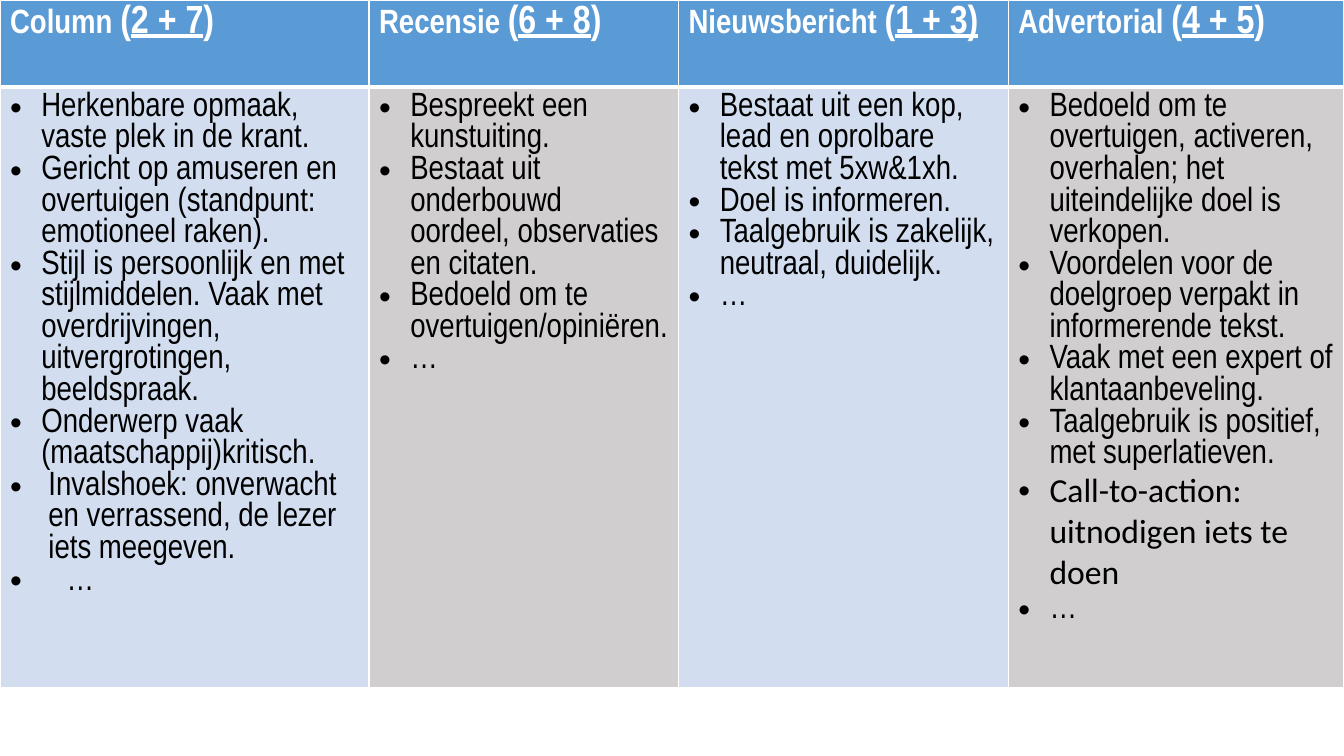
from lxml import etree
from pptx import Presentation
from pptx.dml.color import RGBColor
from pptx.oxml.ns import qn
from pptx.util import Inches, Pt

COLORS = {"header": "5B9BD5", "blue": "D2DEEF", "grey": "D0CECE",
          "white": "FFFFFF", "black": "000000"}
FONT = "Arial Narrow"
COLUMN_WIDTHS = [3.66, 3.07, 3.27, 3.33]
ROW_HEIGHTS = [0.86, 5.96]
HEADER_BORDERS = {"lnL": 1, "lnR": 1, "lnT": 1, "lnB": 3}
BODY_BORDERS = {"lnL": 1, "lnR": 1, "lnT": 3, "lnB": 1}

# Genre, underlined text, text after it, bullet points
GENRES = [
    ("Column", "2 + 7", ")", [
        "Herkenbare opmaak, vaste plek in de krant.",
        "Gericht op amuseren en overtuigen (standpunt: emotioneel raken).",
        "Stijl is persoonlijk en met stijlmiddelen. Vaak met overdrijvingen, "
        "uitvergrotingen, beeldspraak.",
        "Onderwerp vaak (maatschappij)kritisch.",
        "Invalshoek: onverwacht en verrassend, de lezer iets meegeven.",
        "…"]),
    ("Recensie", "6 + 8", ")", [
        "Bespreekt een kunstuiting.",
        "Bestaat uit onderbouwd oordeel, observaties en citaten.",
        "Bedoeld om te overtuigen/opiniëren.",
        "…"]),
    ("Nieuwsbericht", "1 + 3)", "", [
        "Bestaat uit een kop, lead en oprolbare tekst met 5xw&1xh.",
        "Doel is informeren.",
        "Taalgebruik is zakelijk, neutraal, duidelijk.",
        "…"]),
    ("Advertorial", "4 + 5", ")", [
        "Bedoeld om te overtuigen, activeren, overhalen; het uiteindelijke "
        "doel is verkopen.",
        "Voordelen voor de doelgroep verpakt in informerende tekst.",
        "Vaak met een expert of klantaanbeveling.",
        "Taalgebruik is positief, met superlatieven.",
        "Call-to-action: uitnodigen iets te doen",
        "…"]),
]
# Bullets that differ from the rest, by genre and position
INDENTS = {("Column", 4): 0.38, ("Column", 5): 0.56}
LEVELS = {("Column", 5): 1}
FONTS = {("Advertorial", 4): "Calibri"}


def add_span(para, text, color, **formats):
    span = para.add_run()
    span.text = text
    values = {"name": FONT, "size": Pt(24), "bold": False} | formats
    for name, value in values.items():
        setattr(span.font, name, value)
    span.font.color.rgb = RGBColor.from_string(COLORS[color])


def set_bullet(para, indent):
    props = para._p.get_or_add_pPr()
    props.set("marL", str(Inches(indent)))
    props.set("indent", str(-Inches(indent)))
    etree.SubElement(props, qn("a:buFont"), typeface="Arial")
    etree.SubElement(props, qn("a:buChar"), char="•")


def style_cell(cell, fill, borders):
    props = cell._tc.get_or_add_tcPr()
    for edge, width in borders.items():
        line = etree.SubElement(props, qn(f"a:{edge}"), w=str(Pt(width)))
        solid = etree.SubElement(line, qn("a:solidFill"))
        etree.SubElement(solid, qn("a:srgbClr"), val=COLORS["white"])
    cell.fill.solid()
    cell.fill.fore_color.rgb = RGBColor.from_string(COLORS[fill])


def fill_header(cell, genre, numbers, ending):
    style_cell(cell, "header", HEADER_BORDERS)
    para = cell.text_frame.paragraphs[0]
    add_span(para, f"{genre} ", "white", bold=True)
    for text, underline in [("(", False), (numbers, True), (ending, False)]:
        if text:
            add_span(para, text, "white", bold=True, size=Pt(28),
                     underline=underline)


def fill_body(cell, genre, points, fill):
    style_cell(cell, fill, BODY_BORDERS)
    frame = cell.text_frame
    for index, point in enumerate(points):
        para = frame.add_paragraph() if index else frame.paragraphs[0]
        key = genre, index
        para.level = LEVELS.get(key, 0)
        set_bullet(para, INDENTS.get(key, 0.31))
        add_span(para, point, "black", name=FONTS.get(key, FONT))


def add_genre_table(page):
    table = page.shapes.add_table(
        len(ROW_HEIGHTS), len(GENRES), Inches(0), Inches(0),
        Inches(sum(COLUMN_WIDTHS)), Inches(sum(ROW_HEIGHTS))).table
    for column, width in zip(table.columns, COLUMN_WIDTHS):
        column.width = Inches(width)
    for row, height in zip(table.rows, ROW_HEIGHTS):
        row.height = Inches(height)
    for index, (genre, numbers, ending, points) in enumerate(GENRES):
        fill_header(table.cell(0, index), genre, numbers, ending)
        fill_body(table.cell(1, index), genre, points,
                  "grey" if index % 2 else "blue")


def main():
    deck = Presentation()
    deck.slide_width, deck.slide_height = Inches(13.33), Inches(7.5)
    page = deck.slides.add_slide(deck.slide_layouts[6])
    add_genre_table(page)
    deck.save("out.pptx")


if __name__ == "__main__":
    main()
